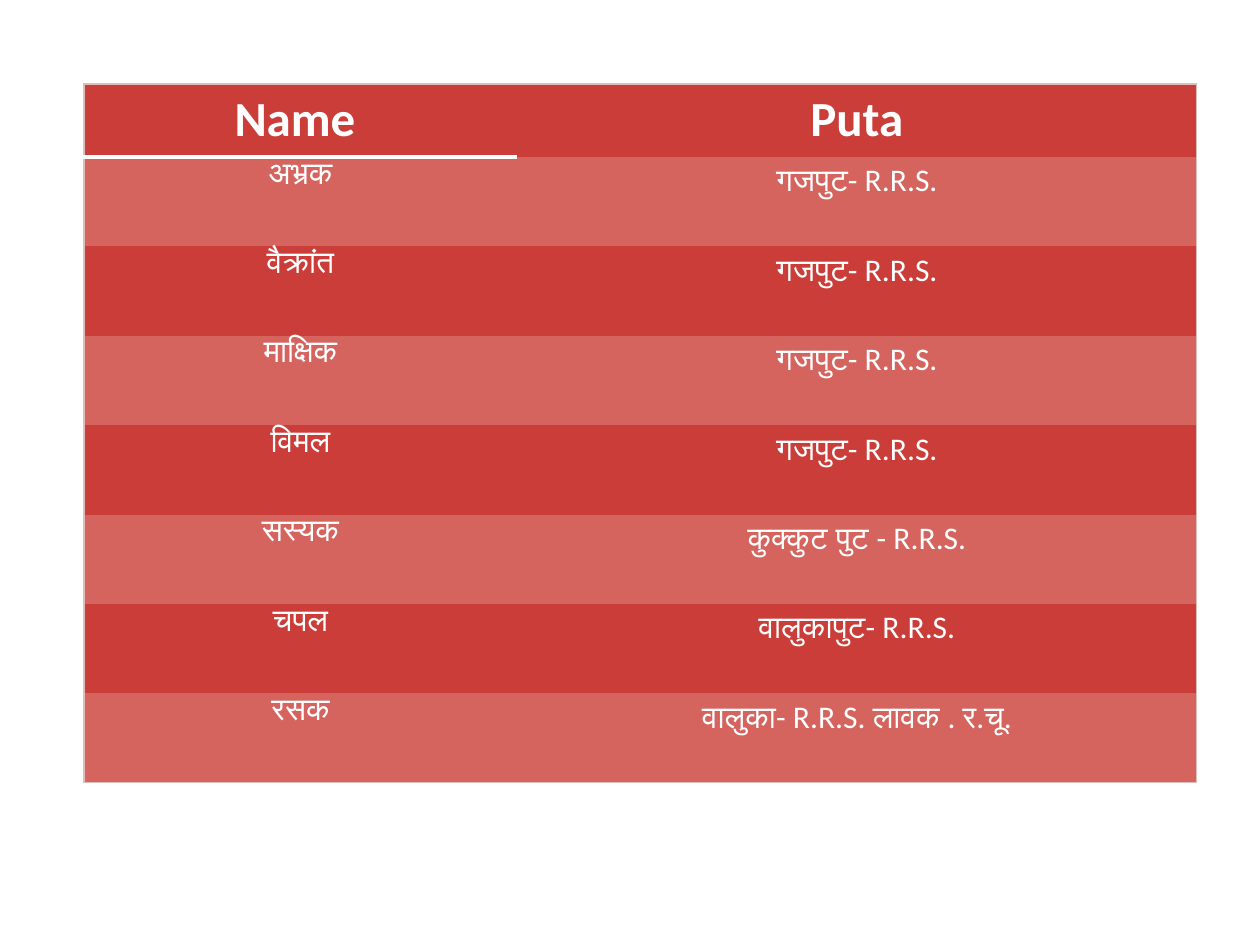
from pptx import Presentation
from pptx.dml.color import RGBColor
from pptx.enum.text import PP_ALIGN
from pptx.oxml import parse_xml
from pptx.oxml.ns import nsdecls
from pptx.util import Pt

PX = 914400 // 126  # EMU in one px
COLORS = {"red": "CB3D38", "light": "D5645F", "white": "FFFFFF", "edge": "DEBDBD"}
PLAIN = "{2D5ABB26-0587-4C30-8999-92F81FD0307C}"  # no style, no grid
WIDTHS = (433, 680)
HEAD, ROW = 73, 626 / 7
TOPS = (2, 5)  # top margin of body cells, by column
ROWS = [
    ("Name ", "Puta"),
    ("अभ्रक", "गजपुट- R.R.S."),
    ("वैक्रांत", "गजपुट- R.R.S."),
    ("माक्षिक", "गजपुट- R.R.S."),
    ("विमल", "गजपुट- R.R.S."),
    ("सस्यक", "कुक्कुट पुट - R.R.S."),
    ("चपल", "वालुकापुट- R.R.S."),
    ("रसक", "वालुका- R.R.S. लावक . र.चू."),
]


def px(n):
    return round(n * PX)


def rgb(name):
    return RGBColor.from_string(COLORS[name])


def write(cell, text, size, bold):
    para = cell.text_frame.paragraphs[0]
    para.alignment = PP_ALIGN.CENTER
    run = para.add_run()
    run.text = text
    font = run.font
    font.name, font.size, font.bold = "Calibri", Pt(size), bold
    font.color.rgb = rgb("white")


def paint(cell, color):
    cell.fill.solid()
    cell.fill.fore_color.rgb = rgb(color)


def edge(cell, sides):
    """Add borders, which the schema wants before the fill: L, R, T, B."""
    props = cell._tc.get_or_add_tcPr()
    for i, (side, (color, width)) in enumerate(sides.items()):
        props.insert(i, parse_xml(
            f'<a:ln{side} {nsdecls("a")} w="{Pt(width)}"><a:solidFill>'
            f'<a:srgbClr val="{COLORS[color]}"/></a:solidFill></a:ln{side}>'))


def borders(r, c):
    thin = ("edge", 0.75)
    sides = {"L" if c == 0 else "R": thin}
    if r == 0:
        sides["T"] = thin
        if c == 0:
            sides["B"] = ("white", 3)
    elif r == len(ROWS) - 1:
        sides["B"] = thin
    return sides


def grid(slide):
    high = HEAD + ROW * (len(ROWS) - 1)
    frame = slide.shapes.add_table(len(ROWS), len(WIDTHS), px(84), px(84),
                                   px(sum(WIDTHS)), px(high))
    table = frame.table
    table._tbl.tblPr[0].text = PLAIN
    table.horz_banding = False
    for col, wide in zip(table.columns, WIDTHS):
        col.width = px(wide)
    for r, texts in enumerate(ROWS):
        head = r == 0
        table.rows[r].height = px(HEAD if head else ROW)
        for c, text in enumerate(texts):
            cell = table.cell(r, c)
            write(cell, text, 28 if head else 18, head)
            if not head:
                cell.margin_top = px(TOPS[c])
            paint(cell, "light" if r % 2 else "red")
            edge(cell, borders(r, c))


def main():
    deck = Presentation()
    deck.slide_width, deck.slide_height = px(1260), px(945)
    # Blank layout: the slide holds only the table
    grid(deck.slides.add_slide(deck.slide_layouts[6]))
    deck.save("out.pptx")


if __name__ == "__main__":
    main()
